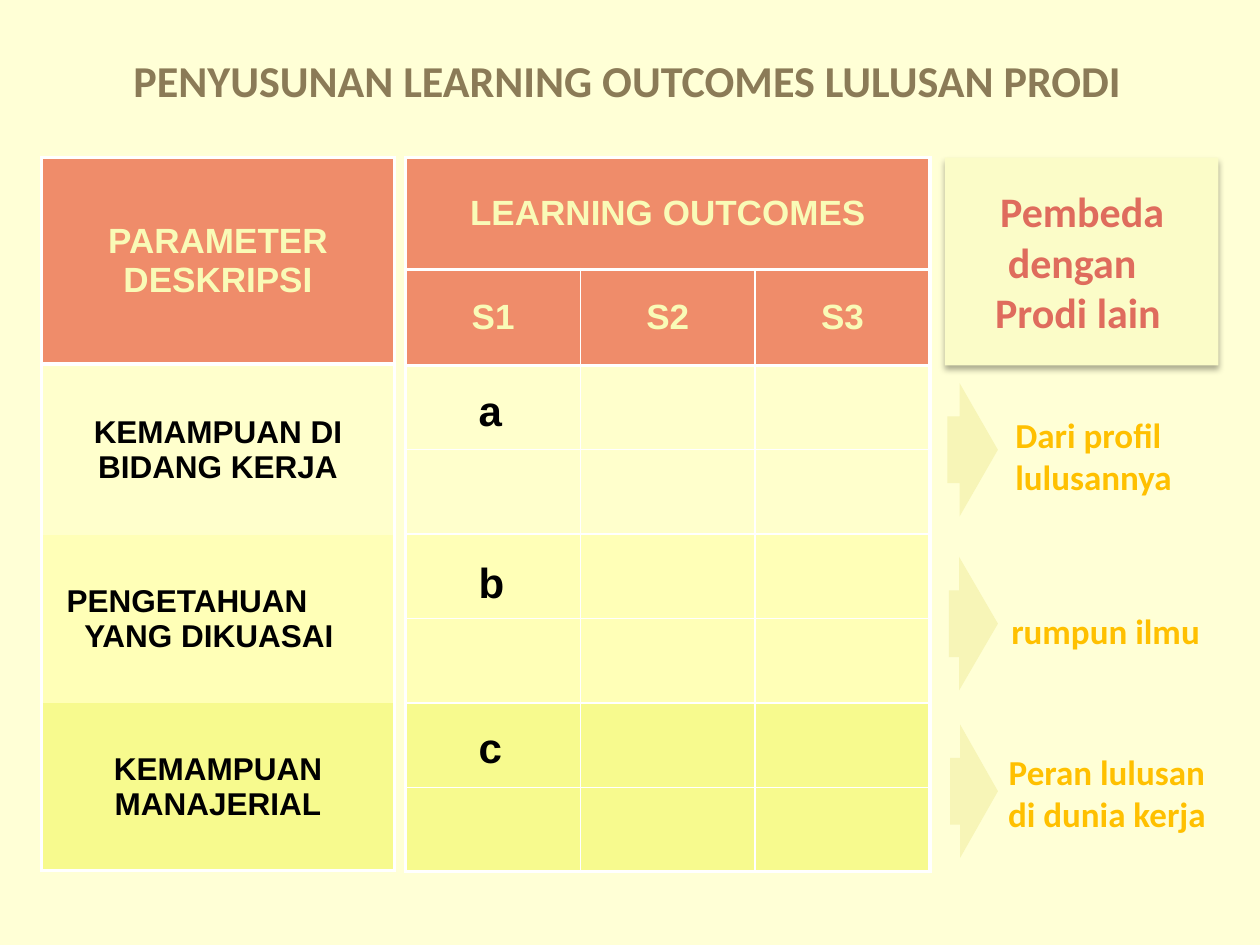
from dataclasses import dataclass
from lxml.etree import SubElement
from pptx import Presentation
from pptx.dml.color import RGBColor
from pptx.enum.shapes import MSO_SHAPE
from pptx.enum.text import MSO_ANCHOR, PP_ALIGN
from pptx.oxml.ns import qn
from pptx.util import Inches, Pt


@dataclass(frozen=True)
class Theme:
    page: str = "FFFFD6"
    title: str = "8B7B57"
    head: str = "EF8C6A"
    cream: str = "F9FBB7"
    bands: tuple = ("FFFFCC", "FFFFB7", "F7FA8E")
    line: str = "FFFFFF"
    ink: str = "000000"
    arrow: str = "F7F5B7"
    note: str = "FFC000"
    card: str = "FBFCC8"
    coral: str = "DF6C5D"
    sans: str = "Calibri"
    grid: str = "Arial"
    big: float = 25.2
    large: int = 24
    mid: int = 20
    small: int = 18
    thick: float = 2.25
    thin: float = 1


def put(frame, text, size, color, font, align=PP_ALIGN.CENTER, indents=()):
    """Write bold text, one paragraph a line, with optional left indents."""
    frame.word_wrap = True
    for i, line in enumerate(text.split("\n")):
        para = frame.paragraphs[0] if i == 0 else frame.add_paragraph()
        para.alignment = PP_ALIGN.LEFT if indents else align
        if indents:
            para._p.get_or_add_pPr().set("marL", str(Inches(indents[i])))
        run = para.add_run()
        run.text = line
        run.font.name, run.font.size, run.font.bold = font, Pt(size), True
        run.font.color.rgb = RGBColor.from_string(color)


class Board:
    def __init__(self, slide, theme):
        self.slide, self.theme = slide, theme
        slide.background.fill.solid()
        slide.background.fill.fore_color.rgb = RGBColor.from_string(theme.page)

    def text(self, box, text, wrap=True, anchor=MSO_ANCHOR.TOP, **form):
        frame = self.slide.shapes.add_textbox(*map(Inches, box)).text_frame
        frame.vertical_anchor = anchor
        put(frame, text, **form)
        frame.word_wrap = wrap

    def shape(self, kind, box, color):
        shape = self.slide.shapes.add_shape(kind, *map(Inches, box))
        shape.shadow.inherit = False
        shape.fill.solid()
        shape.fill.fore_color.rgb = RGBColor.from_string(color)
        shape.line.fill.background()
        return shape

    def arrow(self, box, tip):
        shape = self.shape(MSO_SHAPE.RIGHT_ARROW, box, self.theme.arrow)
        shape.adjustments[0], shape.adjustments[1] = 0.5, tip

    def card(self, box, text, **form):
        shape = self.shape(MSO_SHAPE.RECTANGLE, box, self.theme.card)
        shape.text_frame.vertical_anchor = MSO_ANCHOR.MIDDLE
        put(shape.text_frame, text, **form)
        # Soft shadow straight below
        effects = shape._element.spPr.find(qn("a:effectLst"))
        shade = SubElement(effects, qn("a:outerShdw"), blurRad=str(Pt(3.5)),
                           dist=str(Pt(2.2)), dir="5400000", rotWithShape="0")
        black = SubElement(shade, qn("a:srgbClr"), val=self.theme.ink)
        SubElement(black, qn("a:alpha"), val="32000")

    def edge(self, cell, side, width):
        line = SubElement(cell._tc.get_or_add_tcPr(), qn("a:ln" + side),
                          w=str(Pt(width)))
        if width:
            fill = SubElement(line, qn("a:solidFill"))
            SubElement(fill, qn("a:srgbClr"), val=self.theme.line)
        else:
            SubElement(line, qn("a:noFill"))

    def table(self, box, cols, rows, fills, heads, inner):
        """Grid with thick lines outside and round the head rows."""
        theme, count = self.theme, len(rows)
        table = self.slide.shapes.add_table(
            count, cols, *map(Inches, box)).table
        for col in table.columns:
            col.width = Inches(box[2] / cols)
        across = [theme.thick if k <= heads or k == count else inner
                  for k in range(count + 1)]
        for r, height in enumerate(rows):
            table.rows[r].height = Inches(height)
            down = [theme.thick if r == 0 or k in (0, cols) else theme.thin
                    for k in range(cols + 1)]
            for c in range(cols):
                cell = table.cell(r, c)
                widths = down[c], down[c + 1], across[r], across[r + 1]
                for side, width in zip("LRTB", widths):
                    self.edge(cell, side, width)
                cell.fill.solid()
                cell.fill.fore_color.rgb = RGBColor.from_string(fills[r])
                cell.margin_left = cell.margin_right = Inches(0.07)
                cell.margin_top = cell.margin_bottom = 0
                cell.vertical_anchor = MSO_ANCHOR.MIDDLE
        return table


def main():
    deck = Presentation()
    deck.slide_width, deck.slide_height = Inches(10), Inches(7.5)
    theme = Theme()
    board = Board(deck.slides.add_slide(deck.slide_layouts[6]), theme)
    head = dict(size=theme.mid, color=theme.cream, font=theme.grid)
    body = dict(size=theme.small, color=theme.ink, font=theme.grid)
    mark = dict(size=theme.large, color=theme.ink, font=theme.grid,
                align=PP_ALIGN.LEFT)
    note = dict(size=theme.mid, color=theme.note, font=theme.sans)

    # Title
    board.text((0.77, 0.17, 8.42, 0.92),
               "PENYUSUNAN LEARNING OUTCOMES LULUSAN PRODI",
               anchor=MSO_ANCHOR.MIDDLE, size=theme.big, color=theme.title,
               font=theme.sans)

    # Left table: skill areas
    areas = board.table((0.33, 1.25, 2.8, 5.67), 1, [1.64, 1.36, 1.33, 1.33],
                        [theme.head, *theme.bands], heads=1, inner=0)
    put(areas.cell(0, 0).text_frame, "PARAMETER DESKRIPSI", **head)
    put(areas.cell(1, 0).text_frame, "KEMAMPUAN DI BIDANG KERJA", **body)
    put(areas.cell(2, 0).text_frame, "PENGETAHUAN\nYANG DIKUASAI",
        indents=(0.13, 0.27), **body)
    put(areas.cell(3, 0).text_frame, "KEMAMPUAN MANAJERIAL", **body)

    # Middle table: outcomes by degree, two rows for each area
    fills = [theme.head] * 2 + [band for band in theme.bands for _ in range(2)]
    goals = board.table((3.22, 1.25, 4.16, 5.67), 3, [0.89, 0.76] + [0.67] * 6,
                        fills, heads=2, inner=theme.thin)
    goals.cell(0, 0).merge(goals.cell(0, 2))
    put(goals.cell(0, 0).text_frame, "LEARNING OUTCOMES", **head)
    for c, name in enumerate(("S1", "S2", "S3")):
        put(goals.cell(1, c).text_frame, name, **head)

    # Marks in the first degree column
    for name, top in (("a", 3), ("b", 4.37), ("c", 5.68)):
        board.text((3.7, top, 0.5, 0.5), name, **mark)

    # Arrows and notes
    board.arrow((7.52, 3.04, 0.4, 1.06), 0.76)
    board.arrow((7.53, 4.42, 0.39, 1.06), 0.79)
    board.arrow((7.54, 5.75, 0.38, 1.06), 0.79)
    board.text((7.96, 3.23, 1.6, 0.77), "Dari profil lulusannya",
               align=PP_ALIGN.LEFT, **note)
    board.text((7.89, 4.79, 1.77, 0.44), "rumpun ilmu", wrap=False, **note)
    board.text((7.89, 5.91, 1.79, 0.77), "Peran lulusan\ndi dunia kerja",
               wrap=False, **note)

    # Card at the top right
    board.card((7.5, 1.25, 2.17, 1.65), "Pembeda\ndengan\nProdi lain",
               size=theme.large, color=theme.coral, font=theme.sans,
               indents=(0.34, 0.4, 0.3))
    deck.save("out.pptx")


if __name__ == "__main__":
    main()
